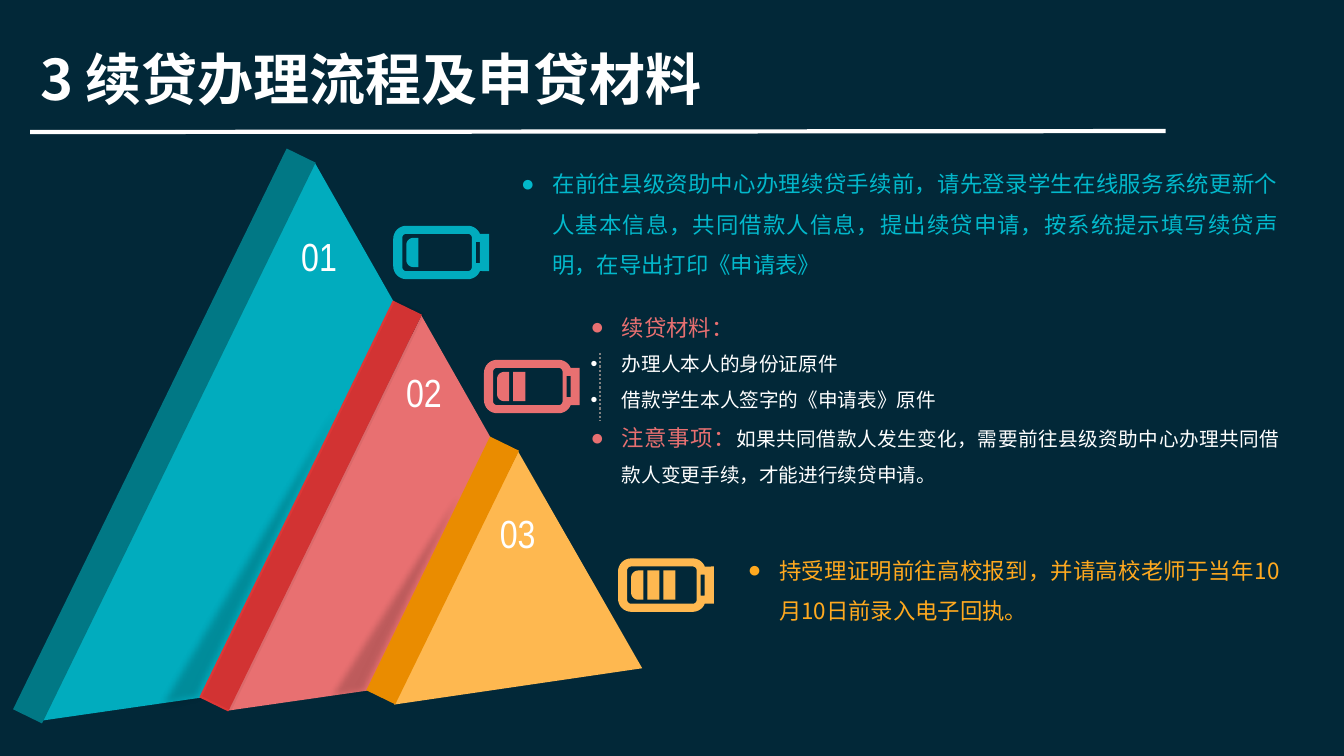
from collections import namedtuple
from math import cos, radians, sin

from lxml.etree import SubElement
from pptx import Presentation
from pptx.dml.color import RGBColor as Color
from pptx.enum.dml import MSO_LINE_DASH_STYLE as Dash
from pptx.enum.shapes import MSO_CONNECTOR as Connector, MSO_SHAPE as Preset
from pptx.enum.text import MSO_AUTO_SIZE as AutoSize, PP_ALIGN as Align
from pptx.oxml.ns import qn
from pptx.util import Inches, Pt

THEME = {
    "background": "022838", "white": "FFFFFF", "black": "000000", "dots": "808080",
    "teal": "01ACBE", "teal side": "017885", "teal text": "02B8CB",
    "red": "E87071", "red side": "DE3636",
    "amber": "FEB850", "amber side": "F99501", "amber text": "FFA91F",
    "title size": 40, "number size": 28, "lead size": 16, "body size": 14,
    "font": "Noto Sans CJK SC", "number font": "Arial Narrow",
}
COLUMNS, ROWS = 13.33, 7.5
CELL = Inches(1)
Layer = namedtuple("Layer", "color face sides shadow shadow_center")
Side = namedtuple("Side", "left top height color opacity")
Arc = namedtuple("Arc", "x y radius start end")
Run = namedtuple("Run", "words size color bold", defaults=[False])

presentation = Presentation()
presentation.slide_width = int(COLUMNS * CELL)
presentation.slide_height = int(ROWS * CELL)
slide = presentation.slides.add_slide(presentation.slide_layouts[6])
slide.background.fill.solid()
slide.background.fill.fore_color.rgb = Color.from_string(THEME["background"])
shapes = slide.shapes


def add_filled(color, contours=None, box=None, rotation=0):
    if box:
        shape = shapes.add_shape(Preset.RECTANGLE, *(round(length * CELL) for length in box))
    else:
        grid = [[(round(x * CELL), round(y * CELL)) for x, y in contour] for contour in contours]
        builder = shapes.build_freeform(*grid[0][0])
        for contour in grid:
            builder.move_to(*contour[0])
            builder.add_line_segments(contour[1:])
        shape = builder.convert_to_shape()
    shape.rotation = rotation
    shape.shadow.inherit = False
    shape.line.fill.background()
    shape.fill.solid()
    shape.fill.fore_color.rgb = Color.from_string(THEME[color])
    return shape


def add_text(box, paragraphs, font_name="font", **paragraph_format):
    shape = shapes.add_textbox(*(round(length * CELL) for length in box))
    frame = shape.text_frame
    for name, value in {"word_wrap": True, "auto_size": AutoSize.SHAPE_TO_FIT_TEXT}.items():
        setattr(frame, name, value)
    for index, (bullet, runs) in enumerate(paragraphs):
        paragraph = frame.add_paragraph() if index else frame.paragraphs[0]
        if bullet:
            properties = paragraph._p.get_or_add_pPr()
            hanging = {"marL": Inches(0.31), "indent": -Inches(0.31), "hangingPunct": 0}
            for name, value in hanging.items():
                properties.set(name, str(value))
            SubElement(properties, qn("a:buFont")).set("typeface", "Arial")
            SubElement(properties, qn("a:buChar")).set("char", bullet)
        for name, value in paragraph_format.items():
            setattr(paragraph, name, value)
        for words, size, color, bold in runs:
            run = paragraph.add_run()
            run.text = words
            font_format = {"name": THEME[font_name], "size": Pt(THEME[size]), "bold": bold}
            for name, value in font_format.items():
                setattr(run.font, name, value)
            run.font.color.rgb = Color.from_string(THEME[color])
            SubElement(run.font._element, qn("a:ea")).set("typeface", THEME[font_name])


add_text((0.3, 0.39, 7.14, 0.77),
         [(None, [Run("3 续贷办理流程及申贷材料", "title size", "white", True)])])

TILT = 26
SIDE_WIDTH = 0.32
SOFT_EDGE = Inches(0.07)
SHADE_OPACITY = {0: 0, 24: 13, 46: 18, 69: 21, 88: 40, 100: 40}
LAYERS = [
    Layer("teal", face=[(3.12, 1.61), (5.82, 6.37), (0.41, 7.15)],
          sides=[Side(1.47, 1.23, 6.19, "teal side", 100)],
          shadow=None, shadow_center=None),
    Layer("red", face=[(4.18, 3.13), (6.09, 6.5), (2.26, 7.05)],
          sides=[Side(2.92, 2.83, 4.38, "red side", 100), Side(2.95, 2.82, 4.38, "black", 5)],
          shadow=[(1.44, 7.1), (4.45, 1.99), (2.02, 6.97)], shadow_center=(2.95, 4.55)),
    Layer("amber", face=[(5.14, 4.48), (6.37, 6.63), (3.91, 6.99)],
          sides=[Side(4.23, 4.26, 2.8, "amber side", 100), Side(4.23, 4.26, 2.8, "black", 6)],
          shadow=[(3.14, 6.99), (5.31, 3.54), (3.67, 6.91)], shadow_center=(4.23, 5.26)),
]
tilt_cos, tilt_sin = cos(radians(TILT)), sin(radians(TILT))
for layer in LAYERS:
    if layer.shadow:
        center_x, center_y = layer.shadow_center
        offsets = [(x - center_x, y - center_y) for x, y in layer.shadow]
        upright = [(center_x + across * tilt_cos + down * tilt_sin,
                    center_y - across * tilt_sin + down * tilt_cos)
                   for across, down in offsets]
        shadow = add_filled("black", contours=[upright], rotation=TILT)
        shadow.fill.gradient()
        shadow.fill.gradient_angle = 0
        stops = shadow._element.xpath(".//a:gsLst")[0]
        for stop in list(stops):
            stops.remove(stop)
        for position, opacity in SHADE_OPACITY.items():
            stop = SubElement(stops, qn("a:gs"))
            stop.set("pos", str(position * 1000))
            stop_color = SubElement(stop, qn("a:srgbClr"))
            stop_color.set("val", THEME["black"])
            SubElement(stop_color, qn("a:alpha")).set("val", str(opacity * 1000))
        effects = shadow._element.spPr.find(qn("a:effectLst"))
        SubElement(effects, qn("a:softEdge")).set("rad", str(SOFT_EDGE))
    add_filled(layer.color, contours=[layer.face])
    for side in layer.sides:
        shape = add_filled(side.color, box=(side.left, side.top, SIDE_WIDTH, side.height),
                           rotation=TILT)
        side_color = shape._element.spPr.xpath("./a:solidFill/a:srgbClr")[0]
        SubElement(side_color, qn("a:alpha")).set("val", str(side.opacity * 1000))

for number, left, top in [("01", 2.66, 2.26), ("02", 3.7, 3.6), ("03", 4.63, 5)]:
    add_text((left, top, 1.01, 0.57), [(None, [Run(number, "number size", "white")])],
             "number font", alignment=Align.CENTER)

LINES = [((5.95, 3.5, 5.95, 4.18), "dots", 1.5, Dash.ROUND_DOT),
         ((0.3, 1.31, 11.56, 1.3), "white", 3, Dash.SOLID)]
for ends, color, width, dash in LINES:
    connector = shapes.add_connector(Connector.STRAIGHT, *(round(length * CELL) for length in ends))
    for name, value in {"width": Pt(width), "dash_style": dash}.items():
        setattr(connector.line, name, value)
    connector.line.color.rgb = Color.from_string(THEME[color])
    SubElement(connector._element.spPr, qn("a:effectLst"))

ARC_STEPS = 8
BAR_LEFT, BAR_TOP, BAR_RIGHT, BAR_BOTTOM = 0.13, 0.12, 0.25, 0.41
BAR_PITCH = 0.16
CASE = [Arc(0.13, 0.13, 0.13, 180, 270), Arc(0.74, 0.13, 0.13, 270, 338),
        Arc(0.95, 0.08, 0, 0, 0), Arc(0.95, 0.45, 0, 0, 0),
        Arc(0.74, 0.4, 0.13, 22, 90), Arc(0.13, 0.4, 0.13, 90, 180)]
WINDOW = [Arc(0.13, 0.12, 0.04, 180, 270), Arc(0.74, 0.12, 0.04, 270, 360),
          Arc(0.74, 0.41, 0.04, 0, 90), Arc(0.13, 0.41, 0.04, 90, 180)]
SLOT = [Arc(x, y, 0, 0, 0) for x, y in [(0.82, 0.16), (0.86, 0.16), (0.86, 0.37), (0.82, 0.37)]]
ROUNDED_BAR = [Arc(0.2, 0.19, 0.07, 180, 270), Arc(BAR_RIGHT, BAR_TOP, 0, 0, 0),
               Arc(BAR_RIGHT, BAR_BOTTOM, 0, 0, 0), Arc(0.2, 0.34, 0.07, 90, 180)]
SQUARE_BAR = [Arc(x, y, 0, 0, 0) for x, y in [(BAR_LEFT, BAR_TOP), (BAR_RIGHT, BAR_TOP),
                                              (BAR_RIGHT, BAR_BOTTOM), (BAR_LEFT, BAR_BOTTOM)]]
BATTERIES = [("teal", 3.9, 2.24), ("red", 4.8, 3.57), ("amber", 6.13, 5.54)]
for square_bars, (color, left, top) in enumerate(BATTERIES):
    parts = [CASE, WINDOW, SLOT, ROUNDED_BAR]
    for bar in range(1, square_bars + 1):
        parts.append([arc._replace(x=arc.x + bar * BAR_PITCH) for arc in SQUARE_BAR])
    contours = []
    for part in parts:
        contour = []
        for arc in part:
            for step in range(ARC_STEPS + 1 if arc.radius else 1):
                angle = radians(arc.start + (arc.end - arc.start) * step / ARC_STEPS)
                contour.append((left + arc.x + arc.radius * cos(angle),
                                top + arc.y + arc.radius * sin(angle)))
        contours.append(contour)
    add_filled(color, contours=contours)

STEPS = [
    ((5.07, 1.51, 7.71, 1.31), [
        ("●", [Run("在前往县级资助中心办理续贷手续前，请先登录学生在线服务系统更新个人基本信息，"
                   "共同借款人信息，提出续贷申请，按系统提示填写续贷声明，在导出打印《申请表》",
                   "lead size", "teal text")])]),
    ((5.76, 2.93, 7.03, 2.02), [
        ("●", [Run("续贷材料：", "lead size", "red")]),
        ("•", [Run("办理人本人的身份证原件", "body size", "white")]),
        ("•", [Run("借款学生本人签字的《申请表》原件", "body size", "white")]),
        ("●", [Run("注意事项：", "lead size", "red"),
               Run("如果共同借款人发生变化，需要前往县级资助中心办理共同借款人变更手续，"
                   "才能进行续贷申请。", "body size", "white")])]),
    ((7.32, 5.34, 5.47, 0.91), [
        ("●", [Run("持受理证明前往高校报到，并请高校老师于当年10月10日前录入电子回执。",
                   "lead size", "amber text")])]),
]
for box, paragraphs in STEPS:
    add_text(box, paragraphs, alignment=Align.JUSTIFY, line_spacing=1.5)

presentation.save("out.pptx")
